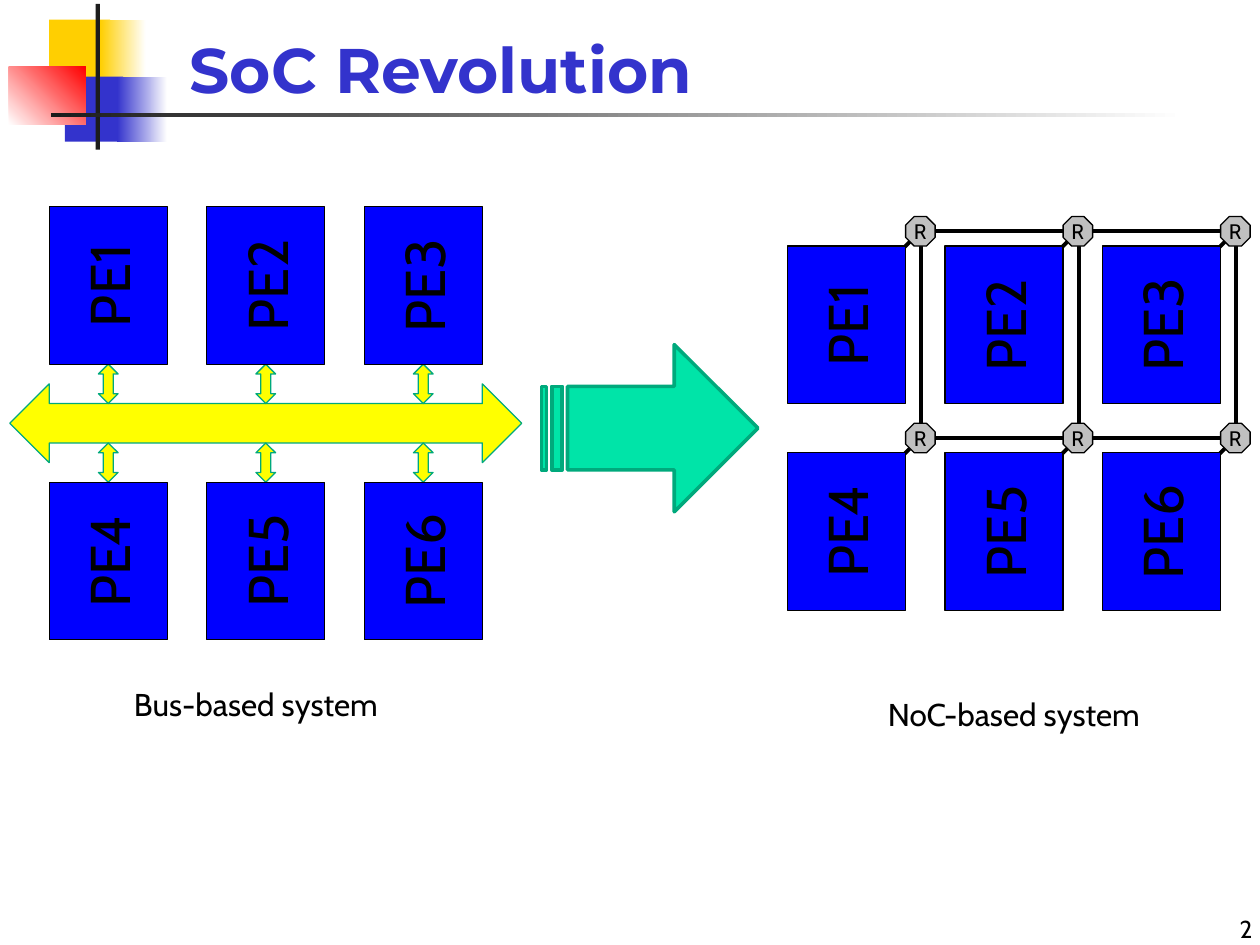
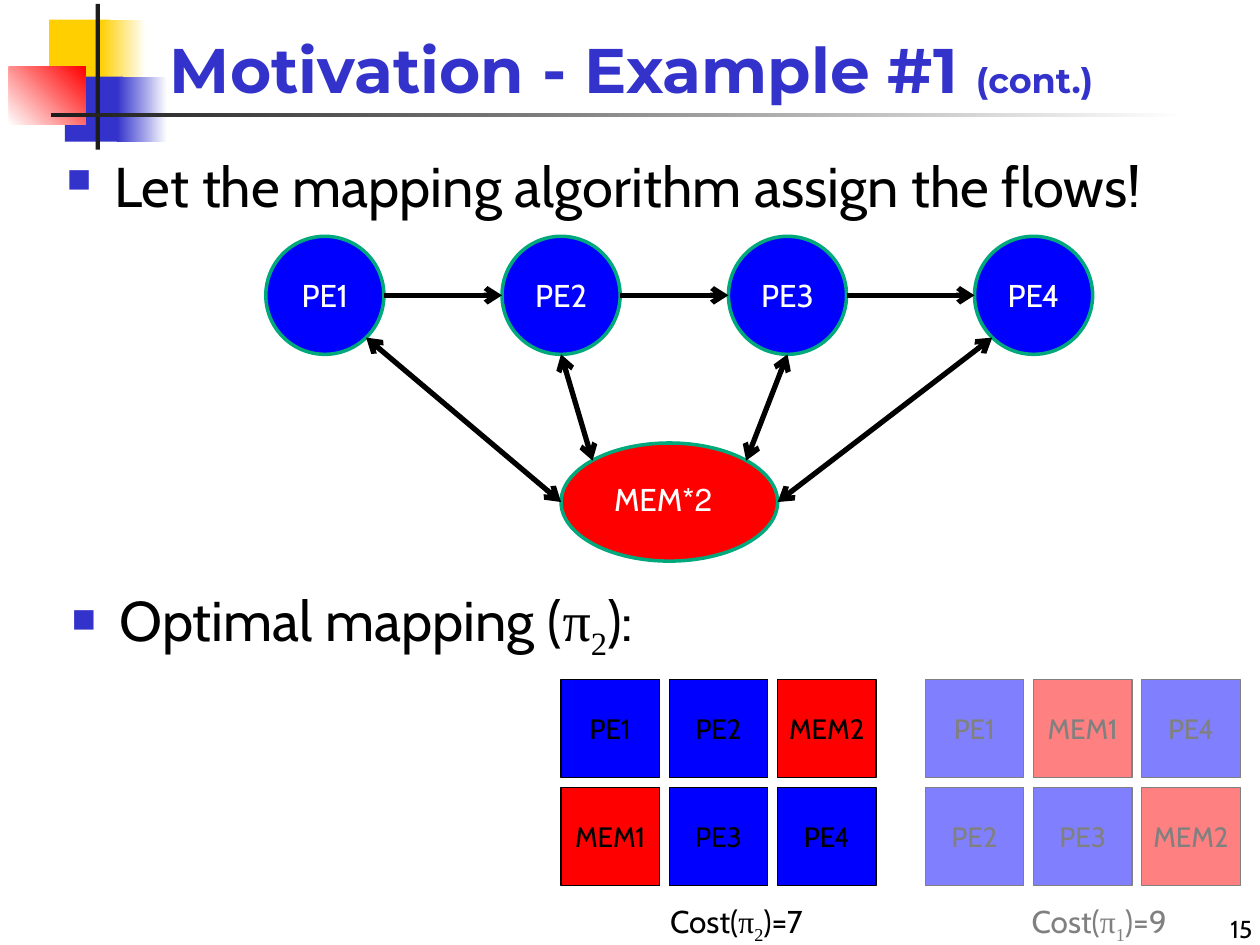
from lxml.etree import SubElement
from pptx import Presentation
from pptx.dml.color import RGBColor
from pptx.enum.shapes import MSO_CONNECTOR, MSO_SHAPE
from pptx.enum.text import MSO_ANCHOR, MSO_AUTO_SIZE, PP_ALIGN
from pptx.oxml.ns import qn
from pptx.util import Inches, Pt

COLORS = {
    "black": "000000", "white": "FFFFFF", "ink": "1C1C1C", "indigo": "3333CC",
    "gold": "FFCF01", "red": "FF0000", "blue": "0000FF", "yellow": "FFFF00",
    "green": "00A97C", "mint": "00E4A8", "gray": "C0C0C0",
}
RGB = {name: RGBColor.from_string(code) for name, code in COLORS.items()}

# Text formats
TITLE = {"name": "Montserrat", "size": Pt(36), "bold": True}
BODY = {"name": "Cabin", "size": Pt(32)}
LABEL = {"name": "Cabin", "size": Pt(18)}
CELL = {"name": "Cabin", "size": Pt(16)}
NUMBER = {"name": "Cabin", "size": Pt(14)}
ROUTER = {"name": "Cabin", "size": Pt(12)}
SERIF = {"name": "Times New Roman"}

# Frame formats
BOTTOM = {"word_wrap": True, "vertical_anchor": MSO_ANCHOR.BOTTOM}
TOP = {"word_wrap": True, "vertical_anchor": MSO_ANCHOR.TOP}
GROW = {**TOP, "auto_size": MSO_AUTO_SIZE.SHAPE_TO_FIT_TEXT}
MIDDLE = {"word_wrap": True, "vertical_anchor": MSO_ANCHOR.MIDDLE}
UNWRAPPED = {"word_wrap": False, "vertical_anchor": MSO_ANCHOR.MIDDLE}

deck = Presentation()
deck.slide_width, deck.slide_height = Inches(10), Inches(7.5)
UNIT = deck.slide_width / 64  # the slide is a grid of 64 columns and 48 rows


def add_box(page, kind, place, fill=None, line=None, weight=0.75, spans=(),
            font=LABEL, color="black", frame=MIDDLE, align=PP_ALIGN.CENTER):
    """Add a shape, or a text box if kind is None; place is in grid units."""
    place = [round(value * UNIT) for value in place]
    if kind is None:
        box = page.shapes.add_textbox(*place)
    else:
        box = page.shapes.add_shape(kind, *place)
        box.shadow.inherit = False
        if isinstance(fill, tuple):
            *ends, angle = fill
            box.fill.gradient()
            box.fill.gradient_angle = angle
            for stop, end in zip(box.fill.gradient_stops, ends):
                stop.color.rgb = RGB[end]
        else:
            box.fill.solid()
            box.fill.fore_color.rgb = RGB[fill]
        if line:
            box.line.color.rgb = RGB[line]
            box.line.width = Pt(weight)
        else:
            box.line.fill.background()
    if spans:
        for name, value in frame.items():
            setattr(box.text_frame, name, value)
        para = box.text_frame.paragraphs[0]
        para.alignment = align
        for text, changes in spans:
            span = para.add_run()
            span.text = text
            span.font.color.rgb = RGB[color]
            for name, value in {**font, **changes}.items():
                if name == "baseline":
                    span.font._element.set("baseline", value)
                else:
                    setattr(span.font, name, value)
    return box


def add_line(page, start, end, weight, arrows=()):
    """Add a straight black line between two grid points."""
    points = [round(value * UNIT) for value in (*start, *end)]
    link = page.shapes.add_connector(MSO_CONNECTOR.STRAIGHT, *points)
    link.line.color.rgb = RGB["black"]
    link.line.width = Pt(weight)
    properties = link.element.spPr
    for arrow in arrows:
        SubElement(properties.find(qn("a:ln")), qn(f"a:{arrow}"), type="arrow")
    SubElement(properties, qn("a:effectLst"))


# Shared decoration, title and page number
DECORATION = [
    ((2.5, 1, 3.1, 3.3), "gold"),
    ((5.1, 1, 2.3, 3.3), ("gold", "white", 0)),
    ((3.3, 3.9, 2.95, 3.3), "indigo"),
    ((5.95, 3.9, 2.55, 3.3), ("indigo", "white", 0)),
    ((0.45, 3.4, 3.9, 2.95), ("white", "red", 45)),
    ((4.86, 0.2, 0.22, 7.4), "ink"),
    ((2.6, 5.75, 57.6, 0.22), ("ink", "white", 0)),
]
HEADINGS = [
    (9, [("SoC Revolution", {})], "2"),
    (8, [("Motivation - Example #1 ", {}), ("(cont.)", {"size": Pt(20)})], "15"),
]
pages = []
for title_left, title, number in HEADINGS:
    page = deck.slides.add_slide(deck.slide_layouts[6])
    for place, fill in DECORATION:
        add_box(page, MSO_SHAPE.RECTANGLE, place, fill)
    add_box(page, None, (title_left, -0.2, 64 - title_left, 5.9), spans=title,
            font=TITLE, color="indigo", frame=BOTTOM, align=PP_ALIGN.LEFT)
    add_box(page, None, (50.95, 45.05, 13.3, 3.2), spans=[(number, {})],
            font=NUMBER, frame=BOTTOM, align=PP_ALIGN.RIGHT)
    pages.append(page)
revolution, motivation = pages

# Slide 1: the bus and its taps
add_box(revolution, MSO_SHAPE.LEFT_RIGHT_ARROW, (0.5, 19.5, 26, 4), "yellow", "green")
for column in range(3):
    for top in (18.5, 22.5):
        add_box(revolution, MSO_SHAPE.UP_DOWN_ARROW, (5 + 8 * column, top, 1, 2),
                "yellow", "green")
add_box(revolution, MSO_SHAPE.STRIPED_RIGHT_ARROW, (27.5, 17.5, 11, 8.5),
        "mint", "green", 2)

# Slide 1: mesh links, drawn under the elements and routers
for column in range(3):
    left = 46.8 + 8 * column
    add_line(revolution, (left, 22), (left, 12), 2.25)
    for top in (11.75, 22.25):
        add_line(revolution, (left - 0.3, top + 0.25), (left - 1.8, top + 1.75), 2.25)
        if column < 2:
            add_line(revolution, (left + 0.1, top), (left + 8.1, top), 2.25)

# Slide 1: processing elements of both systems, then the routers
for first_left, tops in ((2.5, (10.5, 24.5)), (40, (12.5, 23))):
    for index in range(6):
        row, column = divmod(index, 3)
        element = add_box(revolution, MSO_SHAPE.RECTANGLE,
                          (first_left + 8 * column, tops[row], 6, 8), "blue", "black",
                          spans=[(f"PE{index + 1}", {})], font=BODY, frame=UNWRAPPED)
        element.text_frame._txBody.bodyPr.set("vert", "vert270")
for top in (11, 21.5):
    for column in range(3):
        add_box(revolution, MSO_SHAPE.OCTAGON, (46 + 8 * column, top, 1.5, 1.5),
                "gray", "black", spans=[("R", {})], font=ROUTER, frame=UNWRAPPED)

for left, top, caption in ((4, 34.5, "Bus-based system"), (42.5, 35, "NoC-based system")):
    add_box(revolution, None, (left, top, 18, 2.56), spans=[(caption, {})], frame=GROW)

# Slide 2: bullets
BULLETS = [
    ((2.75, 7.36, 60, 20), [("Let the mapping algorithm assign the flows!", {})]),
    ((3, 29.45, 60, 16), [("Optimal mapping (", {}), ("π", SERIF),
                          ("2", {**SERIF, "baseline": "-25000"}), ("):", {})]),
]
for place, spans in BULLETS:
    box = add_box(motivation, None, place, spans=spans, font=BODY, frame=TOP,
                  align=PP_ALIGN.LEFT)
    para = box.text_frame.paragraphs[0]
    para.space_before = Pt(6.4)
    properties = para._p.get_or_add_pPr()
    properties.set("marL", str(Inches(0.38)))
    properties.set("indent", str(-Inches(0.38)))
    SubElement(SubElement(properties, qn("a:buClr")), qn("a:srgbClr"), val=COLORS["indigo"])
    SubElement(properties, qn("a:buSzPct"), val="60000")
    SubElement(properties, qn("a:buChar"), char="■")

# Slide 2: flow graph
element_lefts = (13.5, 25.5, 37, 49.5)
for index, left in enumerate(element_lefts, 1):
    add_box(motivation, MSO_SHAPE.OVAL, (left, 12, 6, 6), "blue", "green", 2,
            [(f"PE{index}", {})], color="white")
memory = add_box(motivation, MSO_SHAPE.OVAL, (28.5, 22.5, 11, 6), "red", "green", 2,
                 [("2*MEM", {})], color="white",
                 frame={**MIDDLE, "margin_left": 0, "margin_top": 0})
memory.text_frame.paragraphs[0]._p.get_or_add_pPr().set("rtl", "1")

for left, next_left in zip(element_lefts, element_lefts[1:]):
    add_line(motivation, (left + 6, 15), (next_left, 15), 3, ["tailEnd"])
MEMORY_FLOWS = [
    ((18.6, 17.15), (28.5, 25.5)),
    ((28.5, 18), (30.1, 23.4)),
    ((40, 18), (37.9, 23.4)),
    ((50.4, 17.15), (39.5, 25.5)),
]
for start, end in MEMORY_FLOWS:
    add_line(motivation, start, end, 3, ["headEnd", "tailEnd"])

# Slide 2: the two mappings and their costs
MAPPINGS = [
    (28.5, 31, "2", "7", ("PE1", "PE2", "MEM2", "MEM1", "PE3", "PE4")),
    (47, 49.5, "1", "9", ("PE1", "MEM1", "PE4", "PE2", "PE3", "MEM2")),
]
for left, cost_left, mapping, cost, tiles in MAPPINGS:
    group = motivation.shapes.add_group_shape()
    for index, tile in enumerate(tiles):
        row, column = divmod(index, 3)
        add_box(group, MSO_SHAPE.RECTANGLE,
                (left + 5.5 * column, 34.5 + 5.5 * row, 5, 5),
                "red" if tile.startswith("MEM") else "blue", "black",
                spans=[(tile, {})], font=CELL, frame=UNWRAPPED)
    spans = [("Cost(", {}), ("π", SERIF),
             (mapping, {**SERIF, "baseline": "-25000"}), (f")={cost}", {})]
    add_box(motivation, None, (cost_left, 45.5, 10.4, 2.56), spans=spans, frame=GROW,
            align=PP_ALIGN.RIGHT)

# Slide 2: half-transparent veil over the costlier mapping
veil = add_box(motivation, MSO_SHAPE.RECTANGLE, (46, 32.5, 17.5, 15.5), "white")
veil_color = veil.element.spPr.find(qn("a:solidFill"))[0]
SubElement(veil_color, qn("a:alpha"), val="50000")
# The page number stays readable above the veil
number_box = next(shape for shape in motivation.shapes
                  if shape.has_text_frame and shape.text_frame.text == "15")
motivation.shapes.element.append(number_box.element)

deck.save("out.pptx")
